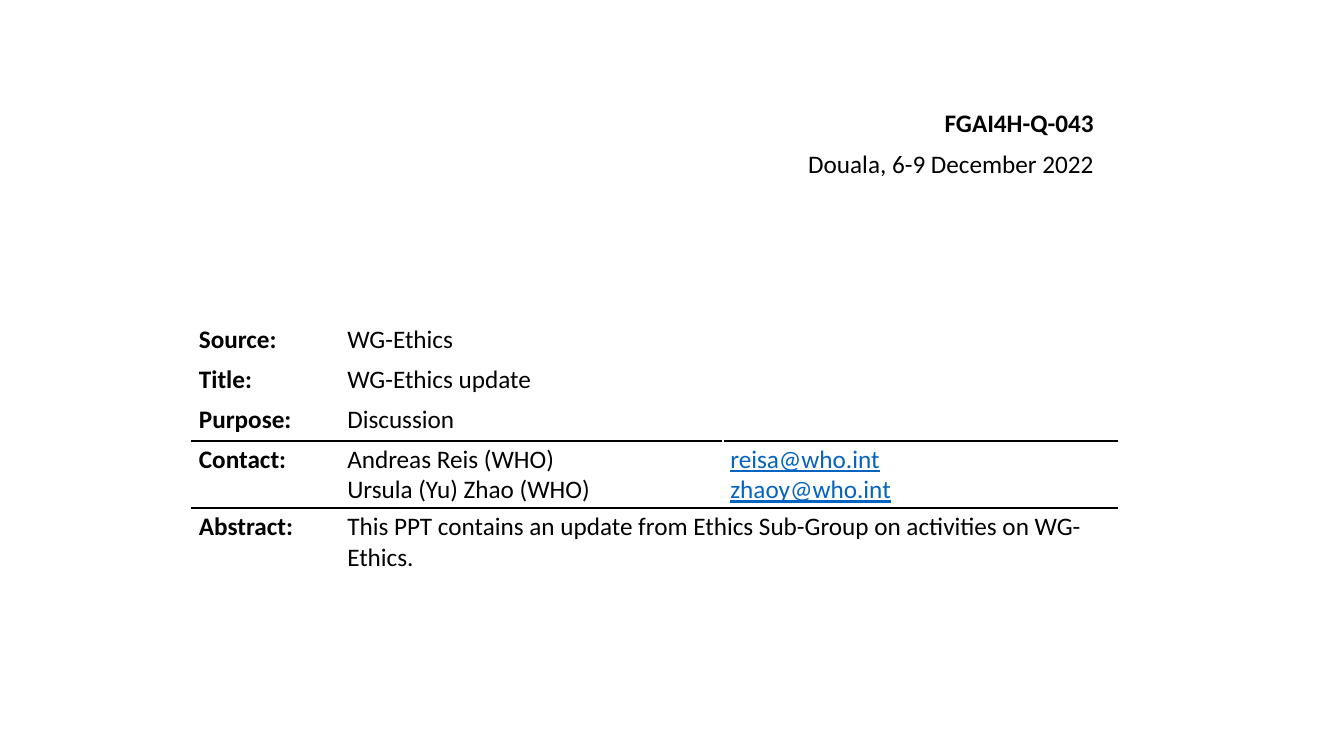
"""Builds the cover slide of a meeting document with its details table."""
from dataclasses import dataclass

from lxml.etree import SubElement
from pptx import Presentation
from pptx.dml.color import RGBColor
from pptx.enum.text import MSO_AUTO_SIZE, PP_ALIGN
from pptx.oxml.ns import qn
from pptx.slide import Slide
from pptx.table import _Cell
from pptx.text.text import _Paragraph
from pptx.util import Pt

BLACK = RGBColor(0x00, 0x00, 0x00)
LINK_BLUE = RGBColor(0x05, 0x63, 0xC1)

PLAIN = {"name": "Calibri", "size": Pt(18), "bold": False}
BOLD = PLAIN | {"bold": True}
LINK = PLAIN | {"underline": True}

COLUMN_WIDTHS = (106, 273.6, 281.8)
ROW_HEIGHT = 28.6
TABLE_HEIGHT = 183.6
CELL_MARGINS = {
    "margin_left": Pt(5.3),
    "margin_right": Pt(5.3),
    "margin_top": Pt(2.6),
    "margin_bottom": Pt(2.6),
}


@dataclass(frozen=True)
class Heading:
    text: str
    left: float
    top: float
    width: float
    style: dict


@dataclass(frozen=True)
class Detail:
    label: str
    lines: tuple[str, ...]
    emails: tuple[str, ...] = ()
    rules: tuple[str, ...] = ()


HEADINGS = (
    Heading("FGAI4H-Q-043", 666, 73.4, 122.4, BOLD),
    Heading("Douala, 6-9 December 2022", 567.4, 102.6, 221, PLAIN),
)

DETAILS = (
    Detail("Source:", ("WG-Ethics",)),
    Detail("Title:", ("WG-Ethics update",)),
    Detail("Purpose:", ("Discussion",), rules=("a:lnB",)),
    Detail(
        "Contact:",
        ("Andreas Reis (WHO)", "Ursula (Yu) Zhao (WHO)"),
        ("reisa@who.int", "zhaoy@who.int"),
        ("a:lnT", "a:lnB"),
    ),
    Detail(
        "Abstract:",
        ("This PPT contains an update from Ethics Sub-Group on activities on WG-Ethics.",),
        rules=("a:lnT",),
    ),
)


def write_lines(
    p: _Paragraph, lines: tuple[str, ...], style: dict, color: RGBColor = BLACK
) -> None:
    """Write lines into one paragraph, separated by line breaks."""
    for name, value in style.items():
        setattr(p.font, name, value)
    for i, line in enumerate(lines):
        if i:
            p.add_line_break()
        r = p.add_run()
        r.text = line
        for name, value in style.items():
            setattr(r.font, name, value)
        r.font.color.rgb = color


def add_heading(s: Slide, heading: Heading) -> None:
    """Add a right-aligned text box."""
    sp = s.shapes.add_textbox(
        Pt(heading.left), Pt(heading.top), Pt(heading.width), Pt(29)
    )
    tf = sp.text_frame
    tf.word_wrap = False
    tf.auto_size = MSO_AUTO_SIZE.SHAPE_TO_FIT_TEXT
    p = tf.paragraphs[0]
    p.alignment = PP_ALIGN.RIGHT
    write_lines(p, (heading.text,), heading.style)


def format_cell(cell: _Cell, rules: tuple[str, ...]) -> None:
    """Set margins, horizontal rules and an empty fill."""
    for name, value in CELL_MARGINS.items():
        setattr(cell, name, value)
    tc_pr = cell._tc.get_or_add_tcPr()
    for tag in rules:
        ln = SubElement(tc_pr, qn(tag), w=str(Pt(1.5)))
        fill = SubElement(ln, qn("a:solidFill"))
        SubElement(fill, qn("a:srgbClr"), val=str(BLACK))
    cell.fill.background()


def add_details(s: Slide, details: tuple[Detail, ...]) -> None:
    """Add the table of document details."""
    frame = s.shapes.add_table(
        len(details), len(COLUMN_WIDTHS), Pt(136.8), Pt(229),
        Pt(sum(COLUMN_WIDTHS)), Pt(TABLE_HEIGHT),
    )
    table = frame.table
    table.first_row = table.horz_banding = False
    for column, width in zip(table.columns, COLUMN_WIDTHS):
        column.width = Pt(width)
    for row, detail in zip(table.rows, details):
        row.height = Pt(ROW_HEIGHT)
        label, body, contact = row.cells
        for cell in (label, body, contact):
            format_cell(cell, detail.rules)
        write_lines(label.text_frame.paragraphs[0], (detail.label,), BOLD)
        write_lines(body.text_frame.paragraphs[0], detail.lines, PLAIN)
        if detail.emails:
            write_lines(
                contact.text_frame.paragraphs[0], detail.emails, LINK, LINK_BLUE
            )
        else:
            body.merge(contact)
    frame.height = Pt(TABLE_HEIGHT)


def main() -> None:
    """Build and save the slide."""
    prs = Presentation()
    prs.slide_width, prs.slide_height = Pt(960), Pt(540)
    s = prs.slides.add_slide(prs.slide_layouts[6])
    for heading in HEADINGS:
        add_heading(s, heading)
    add_details(s, DETAILS)
    prs.save("out.pptx")


if __name__ == "__main__":
    main()
